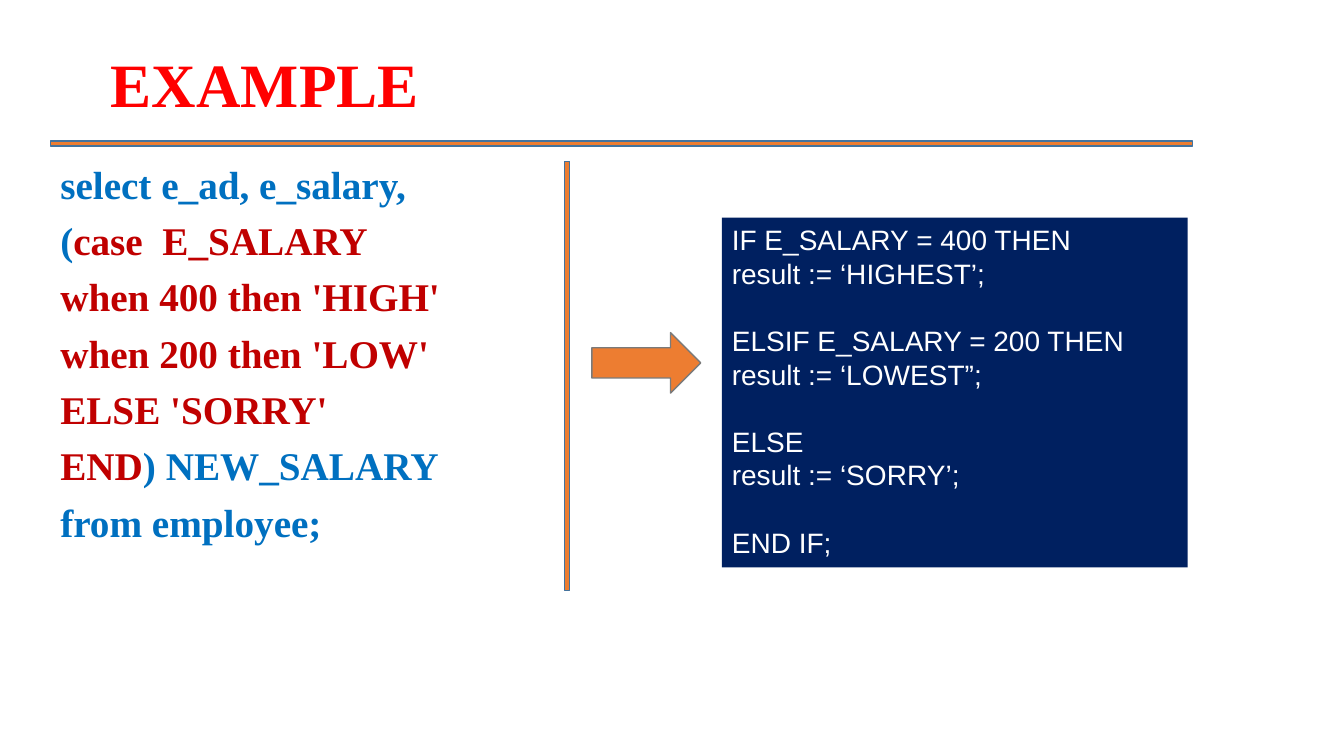
from dataclasses import dataclass

from pptx import Presentation
from pptx.dml.color import RGBColor
from pptx.enum.shapes import MSO_SHAPE
from pptx.enum.text import MSO_ANCHOR, MSO_AUTO_SIZE, PP_ALIGN
from pptx.util import Emu, Pt

RECT, ARROW = MSO_SHAPE.RECTANGLE, MSO_SHAPE.RIGHT_ARROW
TOP, MIDDLE = MSO_ANCHOR.TOP, MSO_ANCHOR.MIDDLE
LEFT, CENTER, JUSTIFY = PP_ALIGN.LEFT, PP_ALIGN.CENTER, PP_ALIGN.JUSTIFY
GROW = MSO_AUTO_SIZE.SHAPE_TO_FIT_TEXT
EMU_PER_PX = 9144


@dataclass(frozen=True)
class Theme:
    serif: str = "Times New Roman"
    sans: str = "Arial"
    title_size: int = 44
    query_size: int = 28
    code_size: int = 20
    title: str = "FF0000"
    query: str = "0070C0"
    case: str = "C00000"
    code: str = "FFFFFF"
    panel: str = "002060"
    accent: str = "ED7D31"
    rule_line: str = "43739E"
    arrow_line: str = "7A7A7A"


THEME = Theme()

QUERY = [
    [("select e_ad, e_salary,", THEME.query)],
    [("(", THEME.query), ("case  E_SALARY", THEME.case)],
    [("when 400 then 'HIGH'", THEME.case)],
    [("when 200 then 'LOW'", THEME.case)],
    [("ELSE 'SORRY'", THEME.case)],
    [("END", THEME.case), (") NEW_SALARY", THEME.query)],
    [("from employee;", THEME.query)],
]

BRANCHES = [
    ["IF E_SALARY = 400 THEN", "result := ‘HIGHEST’;"],
    ["ELSIF E_SALARY = 200 THEN", "result := ‘LOWEST”;"],
    ["ELSE", "result := ‘SORRY’;"],
    ["END IF;"],
]


def px(*lengths):
    return [Emu(n * EMU_PER_PX) for n in lengths]


def apply(target, values):
    for name, value in values.items():
        setattr(target, name, value)


def add_block(s, kind, box, fill, line=None):
    sp = s.shapes.add_shape(kind, *px(*box))
    sp.shadow.inherit = False
    sp.fill.solid()
    sp.fill.fore_color.rgb = RGBColor.from_string(fill)
    if line:
        sp.line.color.rgb = RGBColor.from_string(line)
        sp.line.width = Pt(1)
    else:
        sp.line.fill.background()
    return sp


def add_text(s, box):
    return s.shapes.add_textbox(*px(*box))


def write(sp, paragraphs, frame, para, font):
    tf = sp.text_frame
    apply(tf, {"word_wrap": True, **frame})
    for i, runs in enumerate(paragraphs):
        p = tf.paragraphs[0] if i == 0 else tf.add_paragraph()
        apply(p, para)
        for j, (text, color) in enumerate(runs):
            for k, line in enumerate(text.split("\n")):
                if k:
                    p.add_line_break()
                r = p.add_run()
                r.text = line
                apply(r.font, font)
                r.font.color.rgb = RGBColor.from_string(color)


def main():
    prs = Presentation()
    prs.slide_width, prs.slide_height = px(1333, 750)
    s = prs.slides.add_slide(prs.slide_layouts[6])

    write(add_text(s, (50, 159, 1150, 476)), QUERY,
          {"vertical_anchor": TOP},
          {"alignment": JUSTIFY, "line_spacing": 0.9, "space_before": Pt(10)},
          {"name": THEME.serif, "size": Pt(THEME.query_size), "bold": True})
    add_block(s, RECT, (560, 160, 5, 426), THEME.accent, THEME.rule_line)

    write(add_text(s, (-312, 29, 1150, 116)), [[("EXAMPLE", THEME.title)]],
          {"vertical_anchor": MIDDLE},
          {"alignment": CENTER, "line_spacing": 0.9},
          {"name": THEME.serif, "size": Pt(THEME.title_size), "bold": True})
    add_block(s, RECT, (50, 140, 1133, 5), THEME.accent, THEME.rule_line)

    add_block(s, ARROW, (587, 330, 108, 60), THEME.accent, THEME.arrow_line)
    panel = add_block(s, RECT, (716, 216, 462, 347), THEME.panel)
    line_height = Pt(THEME.code_size * 1.2)
    write(panel, [[("\n".join(lines), THEME.code)] for lines in BRANCHES],
          {"vertical_anchor": TOP, "auto_size": GROW},
          {"alignment": LEFT, "line_spacing": line_height,
           "space_after": line_height},
          {"name": THEME.sans, "size": Pt(THEME.code_size)})

    prs.save("out.pptx")


if __name__ == "__main__":
    main()
